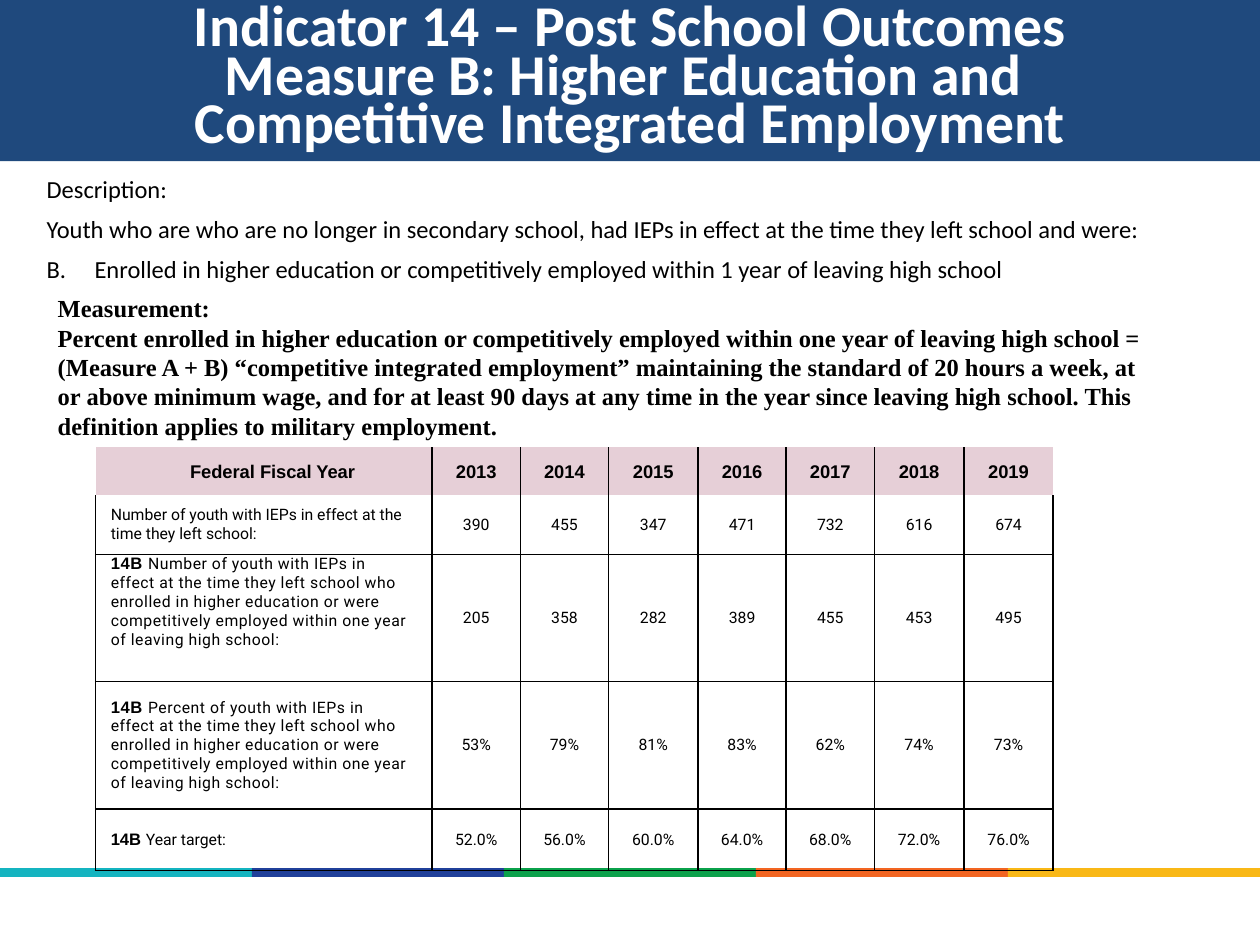
from lxml.etree import SubElement
from pptx import Presentation
from pptx.dml.color import RGBColor
from pptx.enum.shapes import MSO_SHAPE
from pptx.enum.text import MSO_ANCHOR, MSO_AUTO_SIZE, PP_ALIGN
from pptx.oxml import parse_xml
from pptx.oxml.ns import nsdecls, qn
from pptx.util import Inches, Pt

NAVY, WHITE, BLACK, PINK = "1F497D", "FFFFFF", "000000", "E6CFD7"
STRIPE_COLORS = ["14B4C0", "20409A", "0BA14B", "F26522", "F9B817"]

TITLE_LINES = [
    "Indicator 14 – Post School Outcomes",
    "Measure B: Higher Education and ",
    "Competitive Integrated Employment",
]
DESCRIPTION = [
    "Description:",
    "Youth who are who are no longer in secondary school, had IEPs in effect "
    "at the time they left school and were:",
    "Enrolled in higher education or competitively employed within 1 year of "
    "leaving high school",
]
MEASUREMENT = [
    "Measurement:",
    "Percent enrolled in higher education or competitively employed within one "
    "year of leaving high school = (Measure A + B) “competitive integrated "
    "employment” maintaining the standard of 20 hours a week, at or above minimum "
    "wage, and for at least 90 days at any time in the year since leaving high "
    "school. This definition applies to military employment.",
]
YOUTH = ("of youth with IEPs in effect at the time they left school who enrolled "
         "in higher education or were competitively employed within one year of "
         "leaving high school:")
YEARS = [str(year) for year in range(2013, 2020)]
# measure code, label, letter spacing in points, values by year
OUTCOMES = [
    ("", "Number of youth with IEPs in effect at the time they left school:", 0,
     ["390", "455", "347", "471", "732", "616", "674"]),
    ("14B ", f"Number {YOUTH}", 0.3,
     ["205", "358", "282", "389", "455", "453", "495"]),
    ("14B ", f"Percent {YOUTH}", 0.3,
     ["53%", "79%", "81%", "83%", "62%", "74%", "73%"]),
    ("14B ", "Year target:", 0,
     ["52.0%", "56.0%", "60.0%", "64.0%", "68.0%", "72.0%", "76.0%"]),
]
COLUMN_WIDTHS = [2.67, 0.7, 0.7, 0.71, 0.7, 0.7, 0.71, 0.71]
ROW_HEIGHTS = [0.38, 0.47, 1.01, 1.01, 0.49]


def rgb(color):
    return RGBColor.from_string(color)


def style(font, size, name, color=BLACK, bold=False):
    font.size, font.name, font.bold = Pt(size), name, bold
    font.color.rgb = rgb(color)


def place(shape, left, top, width, height):
    shape.left, shape.top = Inches(left), Inches(top)
    shape.width, shape.height = Inches(width), Inches(height)


def fill_paragraphs(frame, lines):
    frame.text = "\n".join(lines)
    return frame.paragraphs


def add_title(slide, left, top, width, height):
    title = slide.shapes.title
    place(title, left, top, width, height)
    title.fill.solid()
    title.fill.fore_color.rgb = rgb(NAVY)
    frame = title.text_frame
    frame.auto_size = MSO_AUTO_SIZE.NONE
    frame.vertical_anchor = MSO_ANCHOR.MIDDLE
    frame.margin_left = frame.margin_right = Inches(0.07)
    frame.margin_top = frame.margin_bottom = Inches(0.04)
    for paragraph in fill_paragraphs(frame, TITLE_LINES):
        paragraph.alignment = PP_ALIGN.CENTER
        paragraph.line_spacing = 0.7
        style(paragraph.font, 33, "Calibri", WHITE, True)


def add_stripes(slide, left, top, width, height):
    group = slide.shapes.add_group_shape()
    stripe_width = width / len(STRIPE_COLORS)
    for i, color in enumerate(STRIPE_COLORS):
        stripe = group.shapes.add_shape(
            MSO_SHAPE.RECTANGLE, Inches(left + i * stripe_width), Inches(top),
            Inches(stripe_width), Inches(height))
        stripe.shadow.inherit = False
        stripe.fill.solid()
        stripe.fill.fore_color.rgb = rgb(color)
        stripe.line.fill.background()


def add_description(slide, left, top, width, height):
    description = slide.placeholders[1]
    place(description, left, top, width, height)
    frame = description.text_frame
    frame.auto_size = MSO_AUTO_SIZE.NONE
    paragraphs = fill_paragraphs(frame, DESCRIPTION)
    for i, paragraph in enumerate(paragraphs):
        paragraph.line_spacing = 0.9
        paragraph.space_before = Pt(7.5 if i else 0)
        properties = paragraph._p.get_or_add_pPr()
        lettered = i == len(paragraphs) - 1
        indent = Inches(0.38) if lettered else 0
        properties.set("marL", str(indent))
        properties.set("indent", str(-indent))
        if lettered:
            SubElement(properties, qn("a:buFont"), typeface="+mj-lt")
            SubElement(properties, qn("a:buAutoNum"),
                       type="alphaUcPeriod", startAt="2")
        else:
            SubElement(properties, qn("a:buNone"))
        style(paragraph.font, 14, "Calibri")


def add_measurement(slide, left, top, width, height):
    measurement = slide.shapes.add_textbox(
        Inches(left), Inches(top), Inches(width), Inches(height))
    frame = measurement.text_frame
    frame.word_wrap = True
    frame.auto_size = MSO_AUTO_SIZE.SHAPE_TO_FIT_TEXT
    frame.vertical_anchor = MSO_ANCHOR.MIDDLE
    for paragraph in fill_paragraphs(frame, MEASUREMENT):
        style(paragraph.font, 14, "Times New Roman", bold=True)


def set_borders(cell, drawn_sides):
    properties = cell._tc.get_or_add_tcPr()
    for i, side in enumerate("LRTB"):
        paint = (f'<a:solidFill><a:srgbClr val="{BLACK}"/></a:solidFill>'
                 if side in drawn_sides else "<a:noFill/>")
        properties.insert(i, parse_xml(
            f'<a:ln{side} {nsdecls("a")} w="{Pt(1)}">{paint}</a:ln{side}>'))


def format_cell(cell, line_points, alignment, left=0, right=0):
    """Set margins, anchor and exact line spacing; return the paragraph."""
    cell.margin_left, cell.margin_right = Inches(left), Inches(right)
    cell.margin_top = cell.margin_bottom = 0
    cell.vertical_anchor = MSO_ANCHOR.MIDDLE
    paragraph = cell.text_frame.paragraphs[0]
    paragraph.alignment = alignment
    paragraph.line_spacing = Pt(line_points)
    return paragraph


def fill_header(table):
    last = len(YEARS)
    for column, heading in enumerate(["Federal Fiscal Year"] + YEARS):
        cell = table.cell(0, column)
        cell.text = heading
        alignment, right = ((PP_ALIGN.CENTER, 0) if column
                            else (PP_ALIGN.RIGHT, 0.61))
        paragraph = format_cell(cell, 12.6, alignment, right=right)
        style(paragraph.font, 10.5, "Arial", bold=True)
        cell.fill.solid()
        cell.fill.fore_color.rgb = rgb(PINK)
        set_borders(cell, ("L" if column else "") + ("R" if column < last else ""))


def fill_outcome(table, row, code, label, spacing, values):
    label_cell = table.cell(row, 0)
    paragraph = format_cell(label_cell, 10.8, PP_ALIGN.LEFT, 0.12, 0.16)
    for text, size, name in [(code, 9.5, "Arial"), (label, 9, "Roboto")]:
        if text:
            run = paragraph.add_run()
            run.text = text
            style(run.font, size, name, bold=text == code)
            if spacing:
                run._r.get_or_add_rPr().set("spc", str(round(spacing * 100)))
    for column, value in enumerate(values, 1):
        cell = table.cell(row, column)
        cell.text = value
        style(format_cell(cell, 10.8, PP_ALIGN.CENTER).font, 9, "Roboto")
    for cell in table.rows[row].cells:
        cell.fill.background()
        set_borders(cell, "LRB" if row == 1 else "LRTB")


def add_outcome_table(slide, left, top):
    table = slide.shapes.add_table(
        len(ROW_HEIGHTS), len(COLUMN_WIDTHS), Inches(left), Inches(top),
        Inches(sum(COLUMN_WIDTHS)), Inches(sum(ROW_HEIGHTS))).table
    table.first_row = table.horz_banding = False
    for column, width in zip(table.columns, COLUMN_WIDTHS):
        column.width = Inches(width)
    for row, height in zip(table.rows, ROW_HEIGHTS):
        row.height = Inches(height)
    fill_header(table)
    for row, outcome in enumerate(OUTCOMES, 1):
        fill_outcome(table, row, *outcome)
    table.cell(2, 0).vertical_anchor = MSO_ANCHOR.TOP


def main():
    presentation = Presentation()
    presentation.slide_width, presentation.slide_height = Inches(10), Inches(7.5)
    slide = presentation.slides.add_slide(presentation.slide_layouts[1])
    add_title(slide, 0, 0, 10, 1.28)
    add_stripes(slide, 0, 6.89, 10, 0.07)
    add_description(slide, 0.27, 1.36, 9.04, 5.4)
    add_outcome_table(slide, 0.76, 3.55)
    add_measurement(slide, 0.36, 2.27, 8.86, 1.28)
    presentation.save("out.pptx")


if __name__ == "__main__":
    main()
